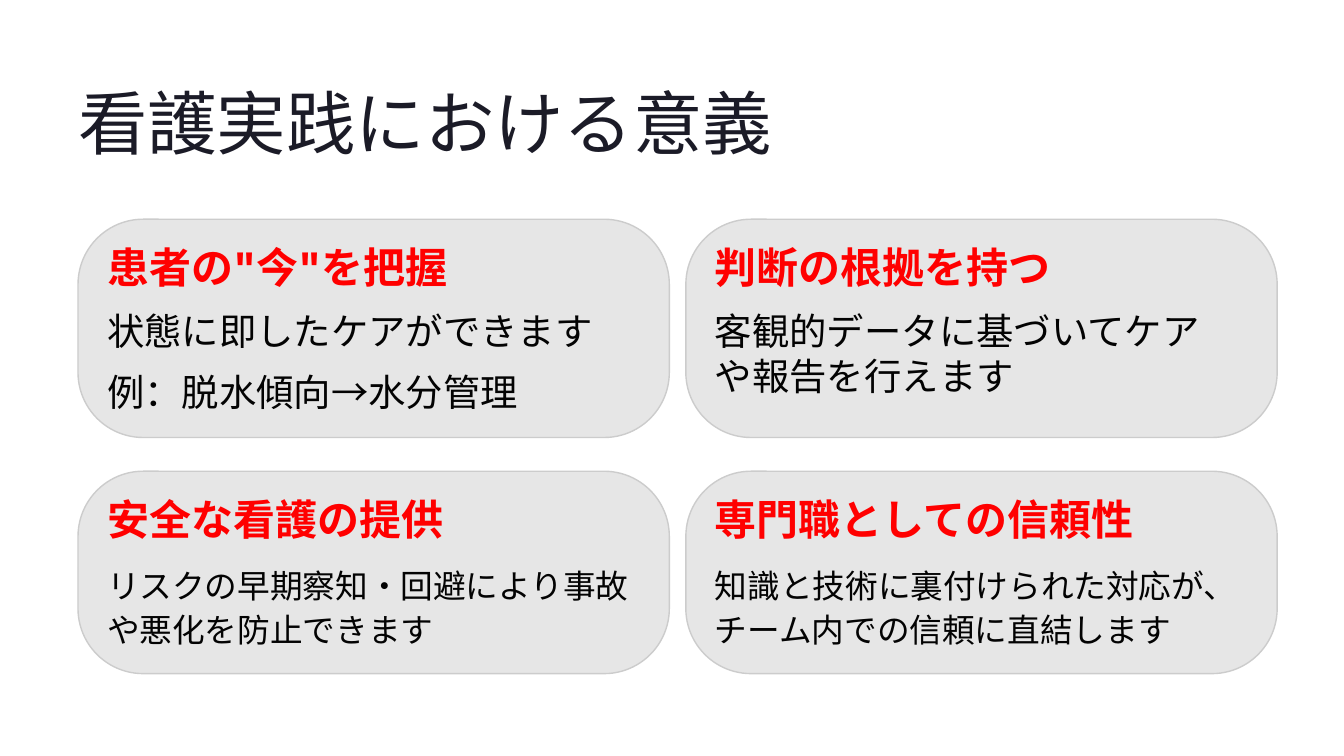
from pptx import Presentation, util as u
from pptx.dml.color import RGBColor
from pptx.enum import shapes, text

INK = RGBColor(0x1B, 0x1B, 0x27)
RED = RGBColor(0xFF, 0x00, 0x00)
BODY_BLACK = RGBColor(0x03, 0x03, 0x03)
CARD_GREY = RGBColor(0xE6, 0xE6, 0xE6)
BORDER_GREY = RGBColor(0xCC, 0xCC, 0xCC)

LEFT, TOP = 2.36, 6.63
COLUMN_STEP, ROW_STEP = 18.38, 7.62
CARD_WIDTH, CARD_HEIGHTS = 17.88, (6.6, 6.12)
CORNER_RADIUS = 1.97
PADDING, LINE_STEP = 0.88, 1.83
HEADING_WIDTH, BODY_WIDTH = 10.52, 15.77
LINE_HEIGHT = 1.34

# Heading, body size, then each body text with the number of lines it fills
CARDS = [
    ("患者の\"今\"を把握", 32,
     [("状態に即したケアができます", 1), ("例：脱水傾向→水分管理", 1)]),
    ("判断の根拠を持つ", 32,
     [("客観的データに基づいてケアや報告を行えます", 2)]),
    ("安全な看護の提供", 28,
     [("リスクの早期察知・回避により事故や悪化を防止できます", 2)]),
    ("専門職としての信頼性", 28,
     [("知識と技術に裏付けられた対応が、チーム内での信頼に直結します", 2)]),
]


def apply(target, values):
    for name, value in values.items():
        setattr(target, name, value)


class SlideBuilder:
    STYLES = {
        "title": {"name": "Inter", "bold": False},
        "heading": {"name": "Inter", "bold": True},
        "body": {"name": "Cabin", "bold": False},
    }
    FRAME = {"margin_left": 0, "margin_top": 0, "margin_right": 0, "margin_bottom": 0,
             "auto_size": text.MSO_AUTO_SIZE.NONE,
             "vertical_anchor": text.MSO_ANCHOR.TOP}

    def __init__(self, slide):
        self.slide = slide

    def set_text(self, shape, wording, style, size, color, spacing, wrap=False):
        """Fill a shape with one left-aligned paragraph."""
        frame = shape.text_frame
        apply(frame, {**self.FRAME, "word_wrap": wrap})
        paragraph = frame.paragraphs[0]
        apply(paragraph, {"alignment": text.PP_ALIGN.LEFT,
                          "line_spacing": u.Pt(spacing), "space_before": u.Pt(0)})
        run = paragraph.add_run()
        run.text = wording
        apply(run.font, {**self.STYLES[style], "size": u.Pt(size)})
        run.font.color.rgb = color

    def title(self, wording):
        shape = self.slide.shapes.title
        apply(shape, {"left": u.Cm(LEFT), "top": u.Cm(2.31),
                      "width": u.Cm(21.06), "height": u.Cm(2.64)})
        self.set_text(shape, wording, "title", 59.5, INK, 74.5)

    def textbox(self, left, top, width, height):
        return self.slide.shapes.add_textbox(
            u.Cm(left), u.Cm(top), u.Cm(width), u.Cm(height))

    def panel(self, left, top, height):
        shape = self.slide.shapes.add_shape(
            shapes.MSO_SHAPE.ROUNDED_RECTANGLE,
            u.Cm(left), u.Cm(top), u.Cm(CARD_WIDTH), u.Cm(height))
        shape.adjustments[0] = CORNER_RADIUS / height
        shape.shadow.inherit = False
        shape.fill.solid()
        shape.fill.fore_color.rgb = CARD_GREY
        shape.line.color.rgb = BORDER_GREY
        shape.line.width = u.Pt(1.2)

    def card(self, left, top, height, heading, size, bodies):
        self.panel(left, top, height)
        left, top = left + PADDING, top + PADDING
        box = self.textbox(left, top, HEADING_WIDTH, 1.32)
        self.set_text(box, heading, "heading", 36, RED, 37)
        for wording, lines in bodies:
            top += LINE_STEP
            box = self.textbox(left, top, BODY_WIDTH, LINE_HEIGHT * lines)
            self.set_text(box, wording, "body", size, BODY_BLACK, 38, wrap=lines > 1)


def main():
    presentation = Presentation()
    apply(presentation, {"slide_width": u.Cm(40.64), "slide_height": u.Cm(22.86)})
    title_only = presentation.slide_layouts[5]
    builder = SlideBuilder(presentation.slides.add_slide(title_only))
    builder.title("看護実践における意義")
    for index, card in enumerate(CARDS):
        row, column = divmod(index, 2)
        builder.card(LEFT + column * COLUMN_STEP, TOP + row * ROW_STEP,
                     CARD_HEIGHTS[row], *card)
    presentation.save("out.pptx")


if __name__ == "__main__":
    main()
